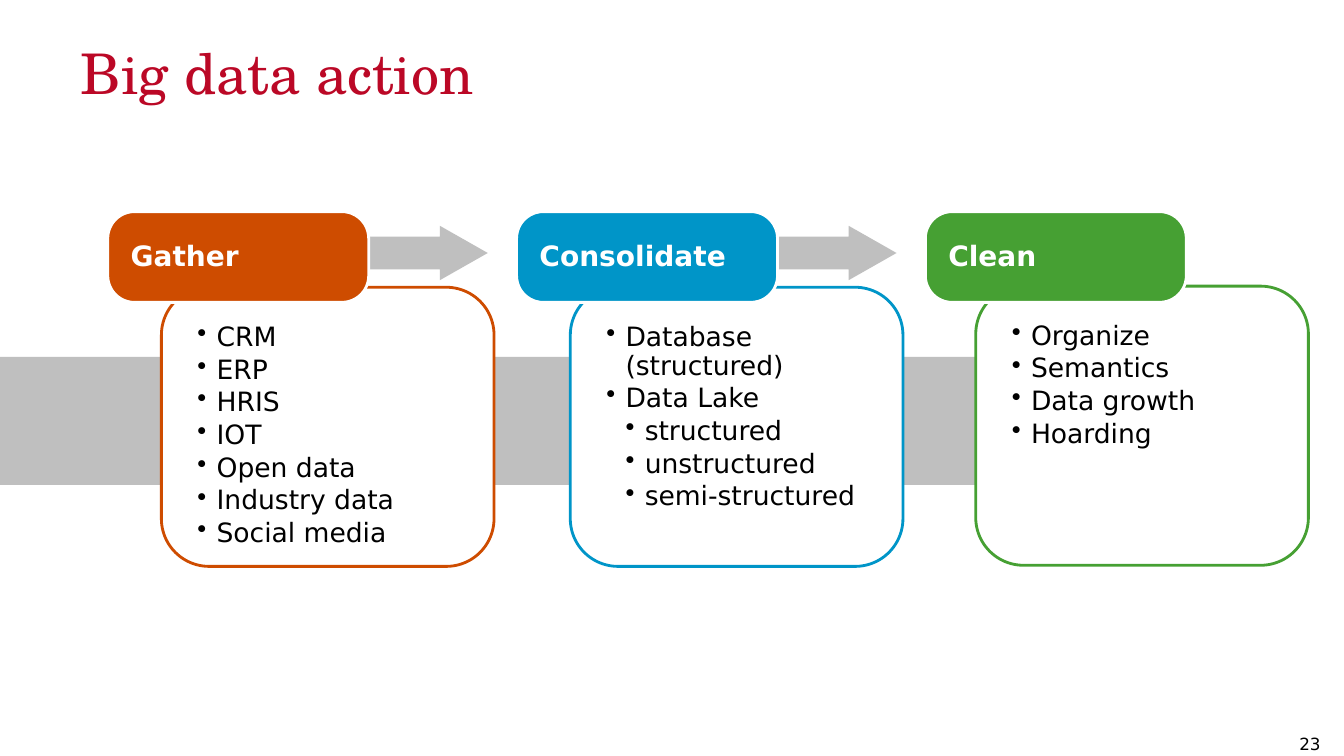
from dataclasses import dataclass
from typing import Any

from pptx import Presentation
from pptx.dml.color import RGBColor
from pptx.enum import shapes, text
from pptx.oxml import ns
from pptx.util import Pt
from lxml import etree

RED = RGBColor(0xBB, 0x08, 0x26)
ORANGE = RGBColor(0xCE, 0x4C, 0x00)
BLUE = RGBColor(0x00, 0x95, 0xC8)
GREEN = RGBColor(0x46, 0xA0, 0x33)
GREY = RGBColor(0xBF, 0xBF, 0xBF)
WHITE = RGBColor(0xFF, 0xFF, 0xFF)
BLACK = RGBColor(0x00, 0x00, 0x00)

SANS = "DejaVu Sans"
SERIF = "TeX Gyre Schola"
FIRST_LEFT = 77
COLUMN_STEP = 292
BULLET_INDENT = 13.7

TITLE_FONT = {"name": SERIF, "size": Pt(40), "bold": False}
TAG_FONT = {"name": SANS, "size": Pt(20), "bold": True}
ITEM_FONT = {"name": SANS, "size": Pt(19), "bold": False}
NUMBER_FONT = {"name": SANS, "size": Pt(12), "bold": False}

TITLE_PARA = {"alignment": text.PP_ALIGN.LEFT, "line_spacing": 1.05}
TAG_PARA = {"alignment": text.PP_ALIGN.LEFT, "line_spacing": 0.9}
ITEM_PARA = {**TAG_PARA, "space_after": Pt(2.85)}
NUMBER_PARA = {"alignment": text.PP_ALIGN.LEFT}

TOP, MIDDLE = text.MSO_ANCHOR.TOP, text.MSO_ANCHOR.MIDDLE
ROUNDED = shapes.MSO_SHAPE.ROUNDED_RECTANGLE


@dataclass(frozen=True)
class Item:
    label: str
    level: int = 1


@dataclass(frozen=True)
class Stage:
    name: str
    color: RGBColor
    items: tuple[Item, ...]
    box_left: float
    box_top: float
    arrow: bool = True


STAGES = (
    Stage("Gather", ORANGE,
          (Item("CRM"), Item("ERP"), Item("HRIS"), Item("IOT"),
           Item("Open data"), Item("Industry data"), Item("Social media")),
          115.3, 205.2),
    Stage("Consolidate", BLUE,
          (Item("Database (structured)"), Item("Data Lake"),
           Item("structured", 2), Item("unstructured", 2),
           Item("semi-structured", 2)),
          407.4, 205.2),
    Stage("Clean", GREEN,
          (Item("Organize"), Item("Semantics"), Item("Data growth"),
           Item("Hoarding")),
          697, 204.4, arrow=False),
)


def apply(target: Any, values: dict[str, Any]) -> None:
    for name, value in values.items():
        setattr(target, name, value)


def set_frame(tf: Any, anchor: Any, x: float, y: float) -> None:
    apply(tf, {"word_wrap": True, "auto_size": text.MSO_AUTO_SIZE.NONE,
               "vertical_anchor": anchor,
               "margin_left": Pt(x), "margin_right": Pt(x),
               "margin_top": Pt(y), "margin_bottom": Pt(y)})


def write(p: Any, label: str, para: dict[str, Any], font: dict[str, Any],
          color: RGBColor) -> None:
    apply(p, para)
    r = p.add_run()
    r.text = label
    apply(r.font, font)
    r.font.color.rgb = color


def add_bullet(p: Any, level: int) -> None:
    p.level = level
    ppr = p._p.get_or_add_pPr()
    ppr.set("marL", str(Pt(BULLET_INDENT * level)))
    ppr.set("indent", str(-Pt(BULLET_INDENT)))
    etree.SubElement(ppr, ns.qn("a:buChar")).set("char", "•")


def add_block(slide: Any, kind: Any, left: float, top: float, width: float,
              height: float, fill: RGBColor, line: RGBColor | None = None,
              adjust: tuple[float, ...] = ()) -> Any:
    sp = slide.shapes.add_shape(kind, Pt(left), Pt(top), Pt(width), Pt(height))
    sp.shadow.inherit = False
    sp.fill.solid()
    sp.fill.fore_color.rgb = fill
    if line is None:
        sp.line.fill.background()
    else:
        sp.line.color.rgb = line
        sp.line.width = Pt(2)
    for i, value in enumerate(adjust):
        sp.adjustments[i] = value
    return sp


def add_stage(slide: Any, stage: Stage, left: float) -> None:
    box = add_block(slide, ROUNDED, stage.box_left, stage.box_top, 237.6, 199.4,
                    WHITE, stage.color, (0.171,))
    tf = box.text_frame
    set_frame(tf, TOP, 15.8, 15.8)
    for i, item in enumerate(stage.items):
        p = tf.add_paragraph() if i else tf.paragraphs[0]
        write(p, item.label, ITEM_PARA, ITEM_FONT, BLACK)
        add_bullet(p, item.level)
    if stage.arrow:
        add_block(slide, shapes.MSO_SHAPE.RIGHT_ARROW, left + 183, 161.3,
                  88.4, 38.9, GREY, adjust=(0.6, 0.88))
    tag = add_block(slide, ROUNDED, left, 151.2, 186.4, 64.8,
                    stage.color, WHITE, (0.294,))
    set_frame(tag.text_frame, MIDDLE, 10.8, 0)
    write(tag.text_frame.paragraphs[0], stage.name, TAG_PARA, TAG_FONT, WHITE)


def main() -> None:
    prs = Presentation()
    apply(prs, {"slide_width": Pt(960), "slide_height": Pt(540)})
    slide = prs.slides.add_slide(prs.slide_layouts[5])

    title = slide.shapes.title
    apply(title, {"left": Pt(57.6), "top": Pt(25.2),
                  "width": Pt(864), "height": Pt(90)})
    set_frame(title.text_frame, TOP, 0, 0)
    write(title.text_frame.paragraphs[0], "Big data action",
          TITLE_PARA, TITLE_FONT, RED)

    add_block(slide, shapes.MSO_SHAPE.RECTANGLE, 0, 255, 934, 91.4, GREY)
    for i, stage in enumerate(STAGES):
        add_stage(slide, stage, FIRST_LEFT + i * COLUMN_STEP)

    number = slide.shapes.add_textbox(Pt(921), Pt(520.6), Pt(39), Pt(19.4))
    set_frame(number.text_frame, TOP, 7.2, 3.6)
    write(number.text_frame.paragraphs[0], "23", NUMBER_PARA, NUMBER_FONT, BLACK)

    prs.save("out.pptx")


if __name__ == "__main__":
    main()
